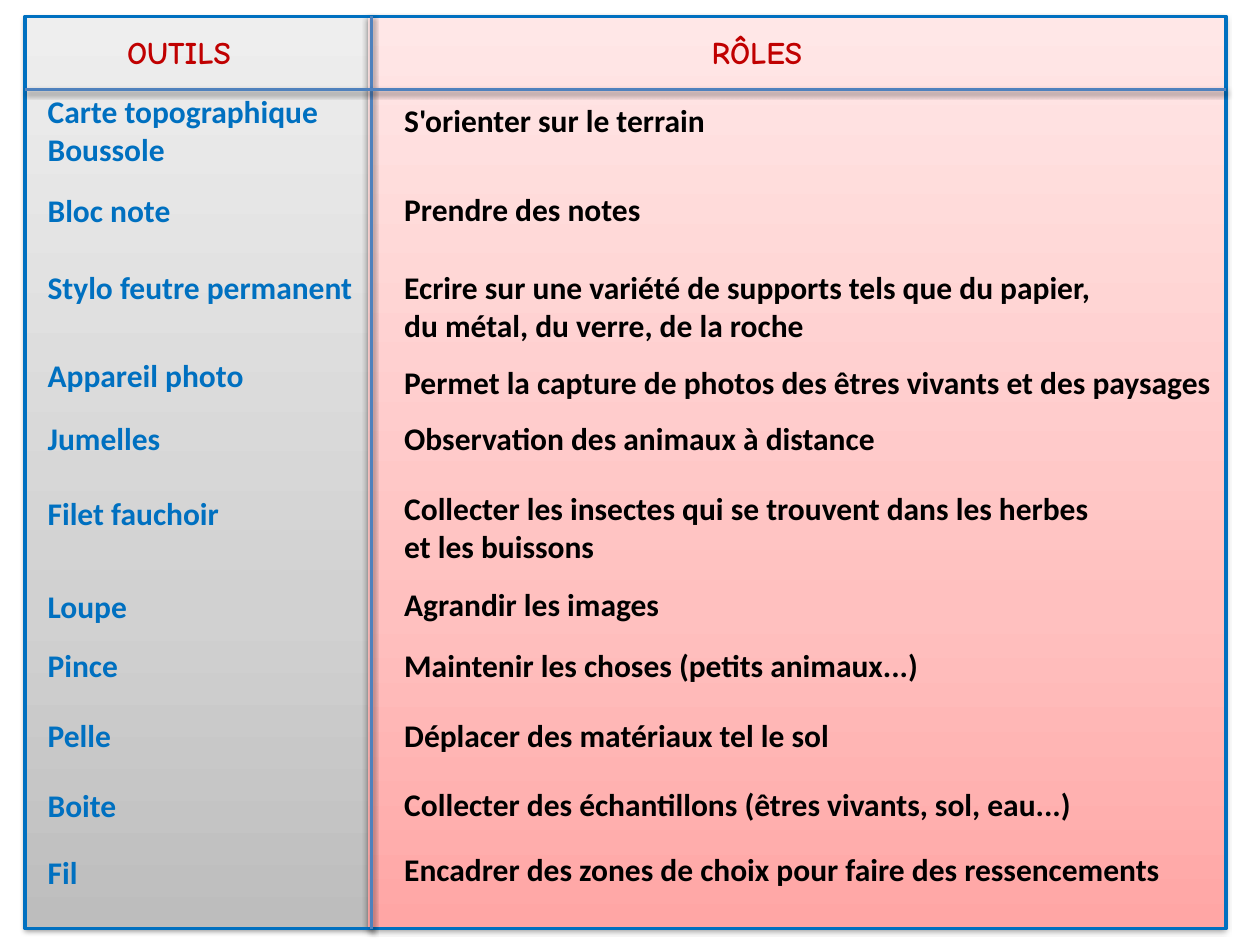
from dataclasses import dataclass

from lxml import etree
from pptx import Presentation
from pptx.dml.color import RGBColor
from pptx.enum.shapes import MSO_CONNECTOR, MSO_SHAPE
from pptx.enum.text import MSO_AUTO_SIZE
from pptx.oxml.ns import qn
from pptx.util import Inches, Pt

RECTANGLE = MSO_SHAPE.RECTANGLE
STRAIGHT = MSO_CONNECTOR.STRAIGHT
GROW = MSO_AUTO_SIZE.SHAPE_TO_FIT_TEXT

BLACK = RGBColor(0x00, 0x00, 0x00)
BLUE = RGBColor(0x00, 0x70, 0xC0)
RULE_BLUE = RGBColor(0x4F, 0x81, 0xBD)
RED = RGBColor(0xC0, 0x00, 0x00)
GREYS = (RGBColor(0xBD, 0xBD, 0xBD), RGBColor(0xD1, 0xD1, 0xD1), RGBColor(0xEE, 0xEE, 0xEE))
PINKS = (RGBColor(0xFF, 0xA6, 0xA5), RGBColor(0xFF, 0xC0, 0xBF), RGBColor(0xFF, 0xE7, 0xE7))
STOP_PERCENTS = (0, 35, 100)

# The slide is a grid of 100 columns by 75 rows of square cells.
COLUMNS, ROWS = 100, 75
CELL = Inches(0.1)
LEFT, TOP, WIDTH, HEIGHT = 2, 1.3, 95.3, 72.4
DIVIDER_COLUMN, HEADER_BOTTOM = 29.5, 7.1
TOOL_COLUMN, ROLE_COLUMN = 2.8, 31.1
LINE_HEIGHTS = {1: 4, 2: 7.1}


@dataclass(frozen=True)
class Entry:
    """A text of the chart; top and width are in grid cells."""
    text: str
    top: float
    width: float
    lines: int = 1
    wrap: bool = False


HEADERS = ((9.1, Entry("OUTILS", 2.1, 12.2)), (55.5, Entry("RÔLES", 2.1, 10.4)))
TOOLS = (
    Entry("Carte topographique\nBoussole", 6.8, 24.2, lines=2),
    Entry("Bloc note", 14.7, 11.8),
    Entry("Stylo feutre permanent", 20.8, 26.4),
    Entry("Appareil photo", 27.8, 17.7),
    Entry("Jumelles", 32.8, 11),
    Entry("Filet fauchoir", 38.7, 15.7),
    Entry("Loupe", 46.1, 8.3),
    Entry("Pince", 50.8, 7.6),
    Entry("Pelle", 56.3, 7.1),
    Entry("Boite", 61.9, 7.5),
    Entry("Fil", 67.2, 5.4, wrap=True),
)
ROLES = (
    Entry("S'orienter sur le terrain", 7.5, 26.2),
    Entry("Prendre des notes", 14.6, 20.9),
    Entry("Ecrire sur une variété de supports tels que du papier, "
          "du métal, du verre, de la roche", 20.8, 57.3, lines=2, wrap=True),
    Entry("Permet la capture de photos des êtres vivants et des paysages", 28.3, 67.1),
    Entry("Observation des animaux à distance", 32.8, 39.7),
    Entry("Collecter les insectes qui se trouvent dans les herbes "
          "et les buissons", 38.3, 57.4, lines=2, wrap=True),
    Entry("Agrandir les images", 45.9, 23),
    Entry("Maintenir les choses (petits animaux...)", 50.8, 43.7),
    Entry("Déplacer des matériaux tel le sol", 56.3, 36.6),
    Entry("Collecter des échantillons (êtres vivants, sol, eau...)", 61.8, 55.9),
    Entry("Encadrer des zones de choix pour faire des ressencements", 67, 62.4),
)


def cells(*counts: float) -> list[int]:
    return [round(count * CELL) for count in counts]


def add_shadow(shape) -> None:
    effects = etree.SubElement(shape.element.spPr, qn("a:effectLst"))
    shadow = etree.SubElement(effects, qn("a:outerShdw"), blurRad=str(Pt(3.1)),
                              dist=str(Pt(1.6)), dir="5400000", rotWithShape="0")
    color = etree.SubElement(shadow, qn("a:srgbClr"), val=str(BLACK))
    etree.SubElement(color, qn("a:alpha"), val="38000")


def add_panel(slide, left: float, width: float, colors: tuple[RGBColor, ...]) -> None:
    panel = slide.shapes.add_shape(RECTANGLE, *cells(left, TOP, width, HEIGHT))
    panel.fill.gradient()
    panel.fill.gradient_angle = 90
    stops = panel.element.spPr.find(".//" + qn("a:gsLst"))
    stops.clear()
    for percent, color in zip(STOP_PERCENTS, colors):
        stop = etree.SubElement(stops, qn("a:gs"), pos=str(percent * 1000))
        etree.SubElement(stop, qn("a:srgbClr"), val=str(color))
    panel.line.fill.background()
    add_shadow(panel)


def add_frame(slide) -> None:
    frame = slide.shapes.add_shape(RECTANGLE, *cells(LEFT, TOP, WIDTH, HEIGHT))
    frame.shadow.inherit = False
    frame.fill.background()
    frame.line.color.rgb = BLUE
    frame.line.width = Pt(2)


def add_rule(slide, *ends: float) -> None:
    rule = slide.shapes.add_connector(STRAIGHT, *cells(*ends))
    rule.line.color.rgb = RULE_BLUE
    rule.line.width = Pt(2)
    add_shadow(rule)


def add_text(slide, entry: Entry, left: float, *, color: RGBColor,
             font: str = "Calibri", size: float = 18, bold: bool = True) -> None:
    box = slide.shapes.add_textbox(
        *cells(left, entry.top, entry.width, LINE_HEIGHTS[entry.lines]))
    frame = box.text_frame
    frame.word_wrap = entry.wrap
    frame.auto_size = GROW
    frame.text = entry.text
    for paragraph in frame.paragraphs:
        for run in paragraph.runs:
            run.font.name = font
            run.font.size = Pt(size)
            run.font.bold = bold
            run.font.color.rgb = color


def main() -> None:
    presentation = Presentation()
    presentation.slide_width, presentation.slide_height = cells(COLUMNS, ROWS)
    slide = presentation.slides.add_slide(presentation.slide_layouts[6])

    right, bottom = LEFT + WIDTH, TOP + HEIGHT
    add_panel(slide, LEFT, 27.6, GREYS)
    add_panel(slide, 29.2, right - 29.2, PINKS)
    for left, header in HEADERS:
        add_text(slide, header, left, color=RED, font="Comic Neue")
    add_frame(slide)
    add_rule(slide, DIVIDER_COLUMN, TOP, DIVIDER_COLUMN, bottom)
    add_rule(slide, LEFT, HEADER_BOTTOM, right, HEADER_BOTTOM)

    for tool, role in zip(TOOLS, ROLES):
        add_text(slide, tool, TOOL_COLUMN, color=BLUE)
        add_text(slide, role, ROLE_COLUMN, color=BLACK)

    presentation.save("out.pptx")


if __name__ == "__main__":
    main()
